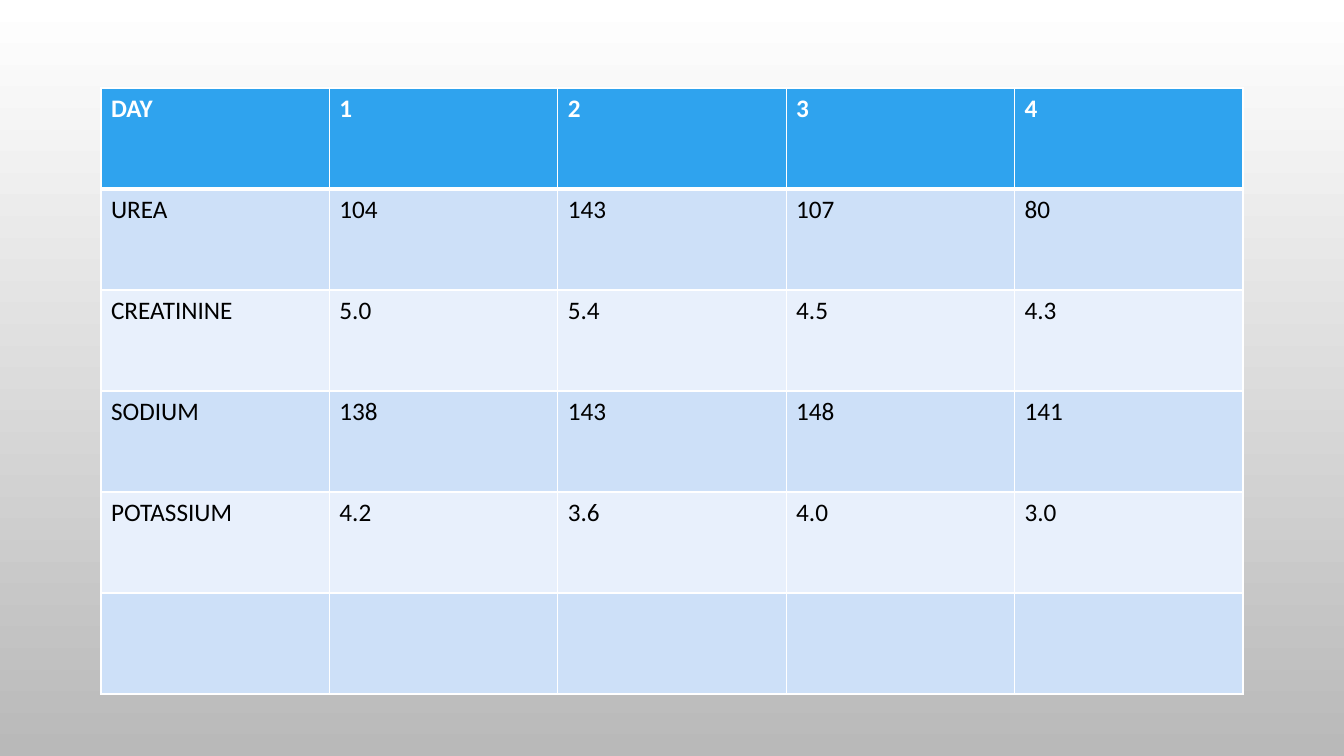
from lxml.etree import SubElement
from pptx import Presentation
from pptx.dml.color import RGBColor
from pptx.oxml.ns import qn
from pptx.util import Pt

# Content
ROWS = [
    ["DAY", "1", "2", "3", "4"],
    ["UREA", "104", "143", "107", "80"],
    ["CREATININE", "5.0", "5.4", "4.5", "4.3"],
    ["SODIUM", "138", "143", "148", "141"],
    ["POTASSIUM", "4.2", "3.6", "4.0", "3.0"],
    ["", "", "", "", ""],
]
BACKGROUND = ["FFFFFF", "B9B9B9"]
HEADER_FILL = "2FA3EE"
BAND_FILLS = ["E8F0FC", "CDE0F8"]
BORDER = "FFFFFF"
HEADER_FONT = {"name": "Calibri", "size": Pt(18), "bold": True}
BODY_FONT = {"name": "Calibri", "size": Pt(18), "bold": False}

# Lengths in px
SCALE = 914400 / 100.8
SLIDE_SIZE = (1344, 756)
TABLE_BOX = (101, 88, 1142, 606)


def emu(px):
    return round(px * SCALE)


def color(value):
    return RGBColor.from_string(value)


def add_borders(cell, widths):
    properties = cell._tc.get_or_add_tcPr()
    for side, points in widths.items():
        line = SubElement(properties, qn(f"a:{side}"), w=str(Pt(points)))
        fill = SubElement(line, qn("a:solidFill"))
        SubElement(fill, qn("a:srgbClr"), val=BORDER)


def fill_cell(cell, text, row):
    header = row == 0
    # Borders precede the fill in the cell properties
    add_borders(cell, {"lnL": 1, "lnR": 1,
                       "lnT": 3 if row == 1 else 1,
                       "lnB": 3 if header else 1})
    cell.fill.solid()
    cell.fill.fore_color.rgb = color(HEADER_FILL if header else BAND_FILLS[row % 2])
    para = cell.text_frame.paragraphs[0]
    if text:
        para.add_run().text = text
    for span in para.runs:
        for name, value in (HEADER_FONT if header else BODY_FONT).items():
            setattr(span.font, name, value)
        span.font.color.rgb = color("FFFFFF" if header else "000000")


def main():
    deck = Presentation()
    deck.slide_width, deck.slide_height = map(emu, SLIDE_SIZE)
    page = deck.slides.add_slide(deck.slide_layouts[6])

    # Background, light at the top
    backdrop = page.background.fill
    backdrop.gradient()
    backdrop.gradient_angle = 270
    for stop, value in zip(backdrop.gradient_stops, BACKGROUND):
        stop.color.rgb = color(value)

    # Table of daily results
    box = map(emu, TABLE_BOX)
    table = page.shapes.add_table(len(ROWS), len(ROWS[0]), *box).table
    for column in table.columns:
        column.width = emu(TABLE_BOX[2] / len(ROWS[0]))
    for row, texts in enumerate(ROWS):
        table.rows[row].height = emu(TABLE_BOX[3] / len(ROWS))
        for column, text in enumerate(texts):
            fill_cell(table.cell(row, column), text, row)

    deck.save("out.pptx")


if __name__ == "__main__":
    main()
